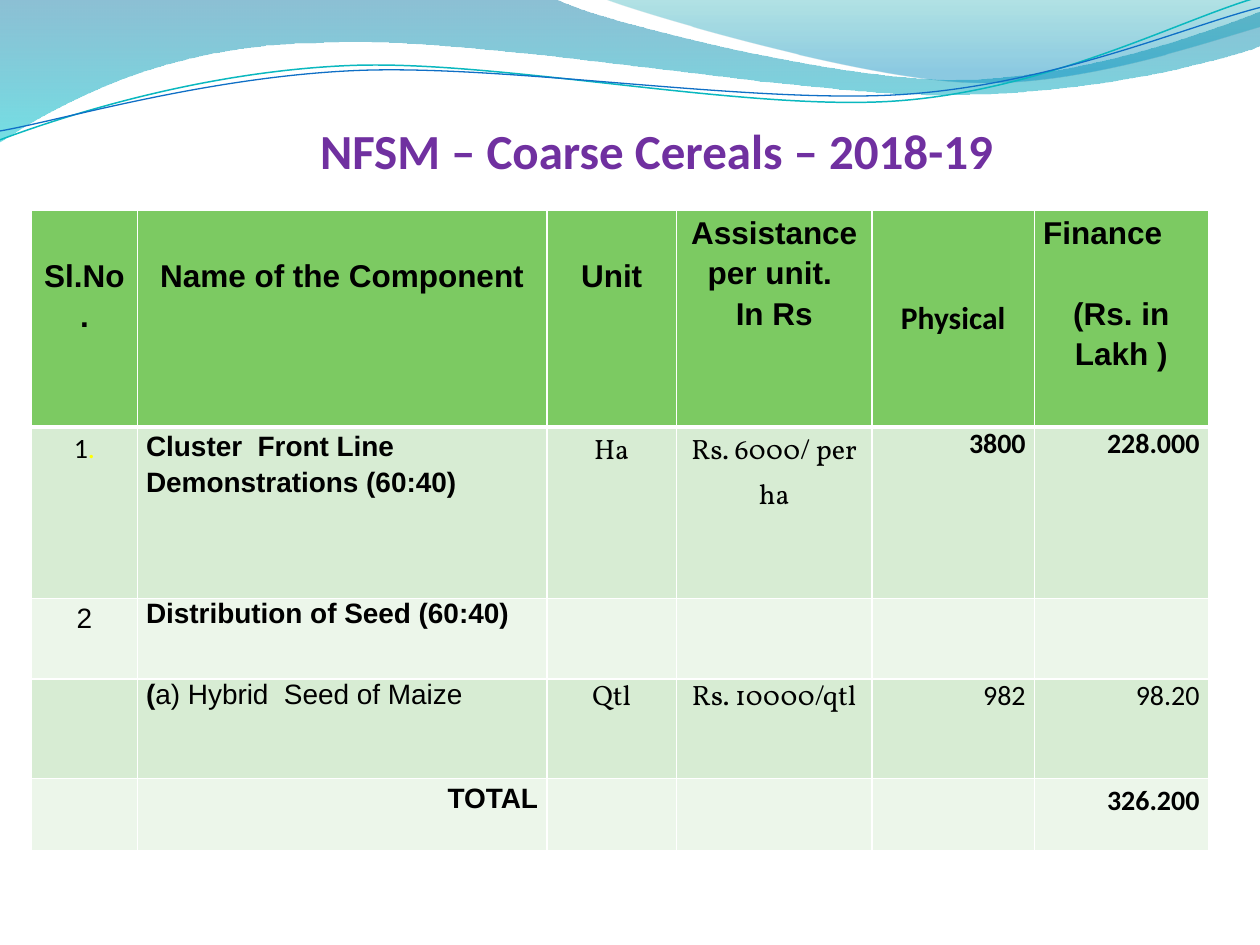
"""Build the NFSM coarse cereals slide with its wave header and budget table."""
from dataclasses import dataclass
from math import cos, radians, sin
from typing import Optional

from lxml.etree import SubElement
from pptx import Presentation
from pptx.dml.color import RGBColor
from pptx.enum.text import MSO_ANCHOR, PP_ALIGN as Align
from pptx.oxml.ns import qn
from pptx.util import Inches, Pt


@dataclass(frozen=True)
class Theme:
    title: str = "7030A0"
    text: str = "000000"
    accent: str = "FFFF00"
    border: str = "FFFFFF"
    header: str = "7CCA62"
    bands: tuple = ("D7ECD3", "ECF6EA")
    sans: str = "Arial"
    body: str = "Calibri"
    serif: str = "Vollkorn"
    title_size: int = 28
    header_size: int = 18
    cell_size: int = 16


T = Theme()


@dataclass(frozen=True)
class Run:
    text: str
    font: str = T.sans
    bold: bool = False
    color: str = T.text
    size: int = T.cell_size


@dataclass(frozen=True)
class Para:
    runs: tuple
    align: Align = Align.CENTER
    spacing: float = 1.15
    after: float = 0


@dataclass(frozen=True)
class Cell:
    paras: tuple = ()
    top: float = 0


@dataclass(frozen=True)
class Stop:
    position: float
    color: str
    alpha: int


@dataclass(frozen=True)
class Wave:
    start: tuple
    segments: tuple
    stops: tuple = ()
    line: Optional[str] = None
    width: float = 0
    tilt: float = 0
    center: tuple = (0, 0)


WAVES = (
    Wave((0, -0.01), ((4.4, -0.01), (4.76, 0.17, 6.64, 0.63, 7.58, 0.63),
                      (8.53, 0.63, 9.58, 0.26, 10, 0.09), (10.01, 0.36),
                      (9.83, 0.44, 8.7, 0.76, 7.46, 0.75),
                      (6.22, 0.75, 3.82, 0.28, 2.57, 0.34),
                      (1.29, 0.35, 0.46, 0.83, -0.01, 1.13), (0, -0.01)),
         stops=(Stop(0, "0074A1", 45), Stop(1, "00C6CF", 55))),
    Wave((4.79, -0.01), ((5.09, 0.11, 6.82, 0.62, 7.69, 0.65),
                         (8.56, 0.69, 9.61, 0.32, 10, 0.21), (10, 0), (4.79, -0.01)),
         stops=(Stop(0, "00A1A9", 30), Stop(0.8, "008BBF", 45))),
    Wave((0, 1.11), ((0.48, 0.93, 1.58, 0.57, 2.77, 0.52),
                     (3.95, 0.47, 5.93, 0.89, 7.13, 0.8),
                     (8.33, 0.71, 9.38, 0.15, 9.98, -0.02)),
         line="0AB8BF", width=0.85, tilt=2.7, center=(4.99, 0.58)),
    Wave((0, 1.04), ((0.47, 0.96, 1.64, 0.61, 2.83, 0.56),
                     (4.03, 0.51, 5.97, 0.83, 7.17, 0.75),
                     (8.36, 0.67, 9.41, 0.21, 10, 0.06)),
         line="0F6FC6", width=0.75, tilt=2.7, center=(5, 0.59)),
)

COLUMNS = (0.84, 3.25, 1.03, 1.55, 1.29, 1.38)
ROWS = (1.72, 1.36, 0.64, 0.79, 0.57)


def head(*lines: str, top: float = 0, font: str = T.sans) -> Cell:
    """Return a centred bold header cell."""
    return Cell(tuple(Para((Run(s, font, True, size=T.header_size),)) for s in lines), top)


def entry(text: str, font: str = T.sans, bold: bool = False,
          align: Align = Align.CENTER, spacing: float = 1.15) -> Cell:
    """Return a body cell holding one run."""
    return Cell((Para((Run(text, font, bold),), align, spacing),))


def amount(text: str, bold: bool = False, spacing: float = 1) -> Cell:
    """Return a right-aligned number cell."""
    return entry(text, T.body, bold, Align.RIGHT, spacing)


FINANCE = Cell((
    Para((Run("Finance", bold=True, size=T.header_size),), Align.LEFT, after=23),
    Para((Run("(Rs. in Lakh )", bold=True, size=T.header_size),)),
))
EMPTY = Cell()
TABLE = (
    (head("Sl.No.", top=0.34), head("Name of the Component", top=0.34),
     head("Unit", top=0.34), head("Assistance per unit. ", "In Rs"),
     head("Physical", top=0.66, font=T.body), FINANCE),
    (Cell((Para((Run("1", T.body), Run(".", T.body, color=T.accent))),)),
     entry("Cluster  Front Line Demonstrations (60:40)", bold=True, align=Align.LEFT),
     entry("Ha", T.serif), entry("Rs. 6000/ per ha", T.serif),
     amount("3800", True), amount("228.000", True)),
    (entry("2"), entry("Distribution of Seed (60:40)", bold=True, align=Align.LEFT, spacing=1),
     EMPTY, EMPTY, EMPTY, EMPTY),
    (EMPTY, Cell((Para((Run("(", bold=True), Run("a) Hybrid  Seed of Maize")), Align.LEFT, 1),)),
     entry("Qtl", T.serif, spacing=1), entry("Rs. 10000/qtl", T.serif, spacing=1),
     amount("982"), amount("98.20")),
    (EMPTY, entry("TOTAL", bold=True, align=Align.RIGHT), EMPTY, EMPTY, EMPTY,
     amount("326.200", True, 1.15)),
)


def vertices(wave: Wave) -> list[tuple[int, int]]:
    """Return the anchor and control points of a wave, turned by its tilt."""
    flat = [v for seg in (wave.start, *wave.segments) for v in seg]
    cx, cy = wave.center
    co, si = cos(radians(wave.tilt)), sin(radians(wave.tilt))
    return [(Inches(cx + (x - cx) * co - (y - cy) * si),
             Inches(cy + (x - cx) * si + (y - cy) * co))
            for x, y in zip(flat[::2], flat[1::2])]


def bend(sp, segments: tuple) -> None:
    """Turn each run of three control lines into one cubic curve."""
    geom = next(sp._element.iter(qn("a:path")))
    lines = iter(geom.findall(qn("a:lnTo")))
    for seg in segments:
        group = [next(lines) for _ in range(len(seg) // 2)]
        if len(group) == 3:
            curve = SubElement(geom, qn("a:cubicBezTo"))
            group[0].addprevious(curve)
            for ln in group:
                curve.append(ln[0])
                geom.remove(ln)


def draw_wave(slide, wave: Wave) -> None:
    """Draw a filled wave or a tilted wave line."""
    first, *rest = vertices(wave)
    builder = slide.shapes.build_freeform(*first)
    builder.add_line_segments(rest, close=bool(wave.stops))
    sp = builder.convert_to_shape()
    bend(sp, wave.segments)
    sp.shadow.inherit = False
    sp.rotation = -wave.tilt
    if wave.line:
        sp.fill.background()
        sp.line.color.rgb = RGBColor.from_string(wave.line)
        sp.line.width = Pt(wave.width)
        return
    sp.line.fill.background()
    sp.fill.gradient()
    sp.fill.gradient_angle = 270
    for grad, stop in zip(sp.fill.gradient_stops, wave.stops):
        grad.position = stop.position
        grad.color.rgb = RGBColor.from_string(stop.color)
    for clr, stop in zip(sp._element.iter(qn("a:srgbClr")), wave.stops):
        SubElement(clr, qn("a:alpha"), val=str(stop.alpha * 1000))


def write(tf, paras: tuple) -> None:
    """Write paragraphs into a text frame run by run."""
    tf.word_wrap = True
    for i, para in enumerate(paras):
        p = tf.add_paragraph() if i else tf.paragraphs[0]
        p.alignment, p.line_spacing, p.space_after = para.align, para.spacing, Pt(para.after)
        for run in para.runs:
            r = p.add_run()
            r.text = run.text
            r.font.name, r.font.size, r.font.bold = run.font, Pt(run.size), run.bold
            r.font.color.rgb = RGBColor.from_string(run.color)


def draw_title(slide, text: str) -> None:
    """Draw the slide title."""
    tf = slide.shapes.add_textbox(Inches(0.42), Inches(0.92), Inches(9.58), Inches(0.5)).text_frame
    tf.margin_left = tf.margin_right = tf.margin_bottom = 0
    tf.vertical_anchor = MSO_ANCHOR.BOTTOM
    write(tf, (Para((Run(text, T.body, True, T.title, T.title_size),), spacing=1),))


def set_borders(cell, widths: dict[str, float]) -> None:
    """Give a table cell solid borders of the given widths in points."""
    tc_pr = cell._tc.get_or_add_tcPr()
    for side, width in widths.items():
        ln = SubElement(tc_pr, qn(f"a:ln{side}"), w=str(Pt(width)))
        SubElement(SubElement(ln, qn("a:solidFill")), qn("a:srgbClr"), val=T.border)


def draw_table(slide) -> None:
    """Draw the budget table."""
    table = slide.shapes.add_table(len(ROWS), len(COLUMNS), Inches(0.25), Inches(1.67),
                                   Inches(sum(COLUMNS)), Inches(sum(ROWS))).table
    table.first_row = table.horz_banding = False
    for column, width in zip(table.columns, COLUMNS):
        column.width = Inches(width)
    for i, (row, height, contents) in enumerate(zip(table.rows, ROWS, TABLE)):
        row.height = Inches(height)
        for cell, content in zip(row.cells, contents):
            cell.margin_left = cell.margin_right = Inches(0.07)
            cell.margin_top, cell.margin_bottom = Inches(content.top), 0
            set_borders(cell, {"L": 1, "R": 1, "T": 3 if i == 1 else 1, "B": 1 if i else 3})
            cell.fill.solid()
            cell.fill.fore_color.rgb = RGBColor.from_string(T.bands[(i - 1) % 2] if i else T.header)
            write(cell.text_frame, content.paras)


def main() -> None:
    """Build and save the slide."""
    prs = Presentation()
    prs.slide_width, prs.slide_height = Inches(10), Inches(7.5)
    slide = prs.slides.add_slide(prs.slide_layouts[6])
    for wave in WAVES:
        draw_wave(slide, wave)
    draw_title(slide, "NFSM – Coarse Cereals – 2018-19")
    draw_table(slide)
    prs.save("out.pptx")


if __name__ == "__main__":
    main()
